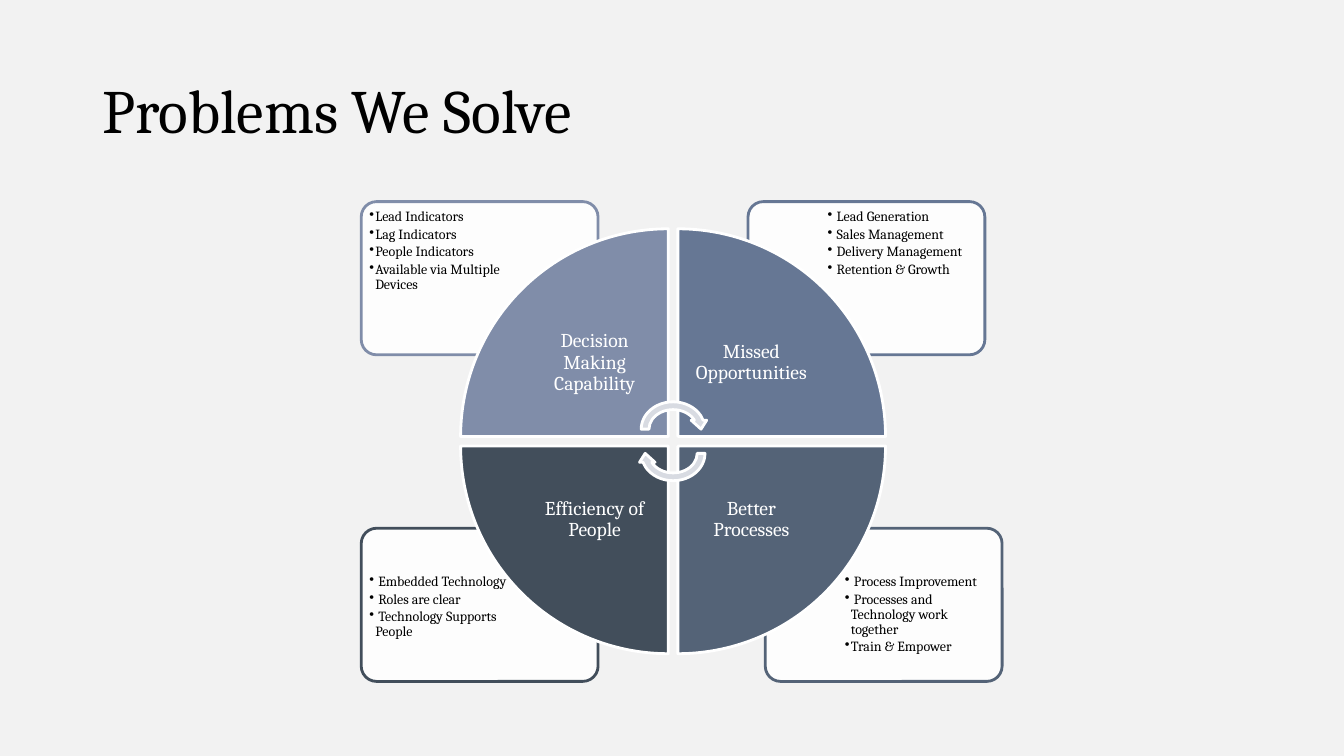
from collections import namedtuple

from lxml import etree
from pptx import Presentation
from pptx import util as u
from pptx.dml.color import RGBColor
from pptx.enum import shapes, text
from pptx.oxml.ns import qn

# The slide is a grid of 160 columns by 90 rows of square cells.
COLUMNS, ROWS = 160, 90
CELL = u.Inches(7.5) / ROWS

FONT = "Cambria"
BACKGROUND = RGBColor(0xF2, 0xF2, 0xF2)
BLACK = RGBColor(0x00, 0x00, 0x00)
WHITE = RGBColor(0xFF, 0xFF, 0xFF)
ARROW_GREY = RGBColor(0xD8, 0xDB, 0xE2)
LIGHT_BLUE = RGBColor(0x80, 0x8D, 0xA9)
MID_BLUE = RGBColor(0x66, 0x77, 0x94)
DEEP_BLUE = RGBColor(0x54, 0x63, 0x77)
DARK_BLUE = RGBColor(0x42, 0x4E, 0x5B)

Box = namedtuple("Box", "left top width height")
Quadrant = namedtuple("Quadrant", "column row rotation color card_left label items")

TITLE_BOX = Box(11, 4.8, 138, 17.4)
DIAGRAM_BOX = Box(43, 24, 76.3, 57.12)
CARD_WIDTH, CARD_HEIGHT = 28.2, 18.24
LIST_WIDTH, LIST_HEIGHT, LIST_MARGIN = 18.96, 12.96, 0.36
WHEEL_LEFT, WHEEL_TOP = 11.84, 3.24
WEDGE, WEDGE_PITCH, LABEL = 24.72, 25.86, 17.52
ARROW_WIDTH, ARROW_HEIGHT, ARROW_SHIFT = 8.52, 7.44, 1.44

# card_left is measured in columns from the left of the diagram.
QUADRANTS = [
    Quadrant(1, 1, 180, DEEP_BLUE, 48.1, "Better Processes",
             [" Process Improvement", " Processes and Technology work together",
              "Train & Empower"]),
    Quadrant(0, 1, 270, DARK_BLUE, 0, "Efficiency of People",
             [" Embedded Technology", " Roles are clear",
              " Technology Supports People"]),
    Quadrant(1, 0, 90, MID_BLUE, 46.05, "Missed Opportunities",
             [" Lead Generation", " Sales Management", " Delivery Management",
              " Retention & Growth"]),
    Quadrant(0, 0, 0, LIGHT_BLUE, 0, "Decision Making Capability",
             ["Lead Indicators", "Lag Indicators", "People Indicators",
              "Available via Multiple Devices"]),
]


def cells(box):
    return [round(length * CELL) for length in box]


def add_bullet(paragraph):
    properties = paragraph._p.get_or_add_pPr()
    properties.set("marL", str(u.Inches(0.06)))
    properties.set("indent", str(u.Inches(-0.06)))
    etree.SubElement(properties, qn("a:buChar")).set("char", "•")


def add_text(slide, box, lines, size, color, align=text.PP_ALIGN.LEFT,
             anchor=text.MSO_ANCHOR.MIDDLE, insets=(0.1, 0.05),
             space_after=0, bullets=False):
    frame = slide.shapes.add_textbox(*cells(box)).text_frame
    frame.word_wrap = True
    frame.vertical_anchor = anchor
    frame.margin_left = frame.margin_right = u.Inches(insets[0])
    frame.margin_top = frame.margin_bottom = u.Inches(insets[1])
    for index, line in enumerate(lines):
        paragraph = frame.add_paragraph() if index else frame.paragraphs[0]
        paragraph.alignment = align
        paragraph.line_spacing = 0.9
        paragraph.space_after = u.Pt(space_after)
        if bullets:
            add_bullet(paragraph)
        run = paragraph.add_run()
        run.text = line
        run.font.name = FONT
        run.font.size = u.Pt(size)
        run.font.color.rgb = color


def add_shape(slide, kind, box, fill, line, rotation=0):
    shape = slide.shapes.add_shape(kind, *cells(box))
    shape.shadow.inherit = False
    shape.fill.solid()
    shape.fill.fore_color.rgb = fill
    shape.line.color.rgb = line
    shape.line.width = u.Pt(2)
    shape.rotation = rotation
    return shape


def add_card(slide, box, quadrant):
    """Place a rounded card with its list in the card's outer corner."""
    card = add_shape(slide, shapes.MSO_SHAPE.ROUNDED_RECTANGLE, box, WHITE,
                     quadrant.color)
    card.adjustments[0] = 0.1
    color = card.fill._xPr.find(qn("a:solidFill"))[0]
    etree.SubElement(color, qn("a:alpha")).set("val", "90000")
    shift_x = (box.width - LIST_WIDTH - LIST_MARGIN if quadrant.column
               else LIST_MARGIN)
    shift_y = (box.height - LIST_HEIGHT - LIST_MARGIN if quadrant.row
               else LIST_MARGIN)
    list_box = Box(box.left + shift_x, box.top + shift_y, LIST_WIDTH, LIST_HEIGHT)
    add_text(slide, list_box, quadrant.items, 10, BLACK,
             anchor=text.MSO_ANCHOR.TOP, insets=(0.05, 0.05),
             space_after=1.7, bullets=True)


def add_wedge(slide, box, quadrant):
    """Place a quarter of the wheel with its label in the inner corner."""
    add_shape(slide, shapes.MSO_SHAPE.PIE_WEDGE, box, quadrant.color, WHITE,
              quadrant.rotation)
    inner = WEDGE - LABEL
    label_box = Box(box.left + (1 - quadrant.column) * inner,
                    box.top + (1 - quadrant.row) * inner, LABEL, LABEL)
    add_text(slide, label_box, [quadrant.label], 14, WHITE,
             align=text.PP_ALIGN.CENTER, insets=(0.11, 0.11))


def add_arrows(slide, center_x, center_y):
    for direction, rotation in ((-1, 0), (1, 180)):
        box = Box(center_x - ARROW_WIDTH / 2,
                  center_y + direction * ARROW_SHIFT - ARROW_HEIGHT / 2,
                  ARROW_WIDTH, ARROW_HEIGHT)
        add_shape(slide, shapes.MSO_SHAPE.CIRCULAR_ARROW, box, ARROW_GREY,
                  WHITE, rotation)


def add_diagram(slide, box):
    for quadrant in QUADRANTS:
        top = box.top + quadrant.row * (box.height - CARD_HEIGHT)
        add_card(slide, Box(box.left + quadrant.card_left, top,
                            CARD_WIDTH, CARD_HEIGHT), quadrant)
    left, top = box.left + WHEEL_LEFT, box.top + WHEEL_TOP
    for quadrant in QUADRANTS:
        add_wedge(slide, Box(left + quadrant.column * WEDGE_PITCH,
                             top + quadrant.row * WEDGE_PITCH,
                             WEDGE, WEDGE), quadrant)
    radius = (WEDGE_PITCH + WEDGE) / 2
    add_arrows(slide, left + radius, top + radius)


def main():
    presentation = Presentation()
    presentation.slide_width = round(COLUMNS * CELL)
    presentation.slide_height = round(ROWS * CELL)
    slide = presentation.slides.add_slide(presentation.slide_layouts[6])
    slide.background.fill.solid()
    slide.background.fill.fore_color.rgb = BACKGROUND
    add_text(slide, TITLE_BOX, ["Problems We Solve"], 44, BLACK)
    add_diagram(slide, DIAGRAM_BOX)
    presentation.save("out.pptx")


if __name__ == "__main__":
    main()
